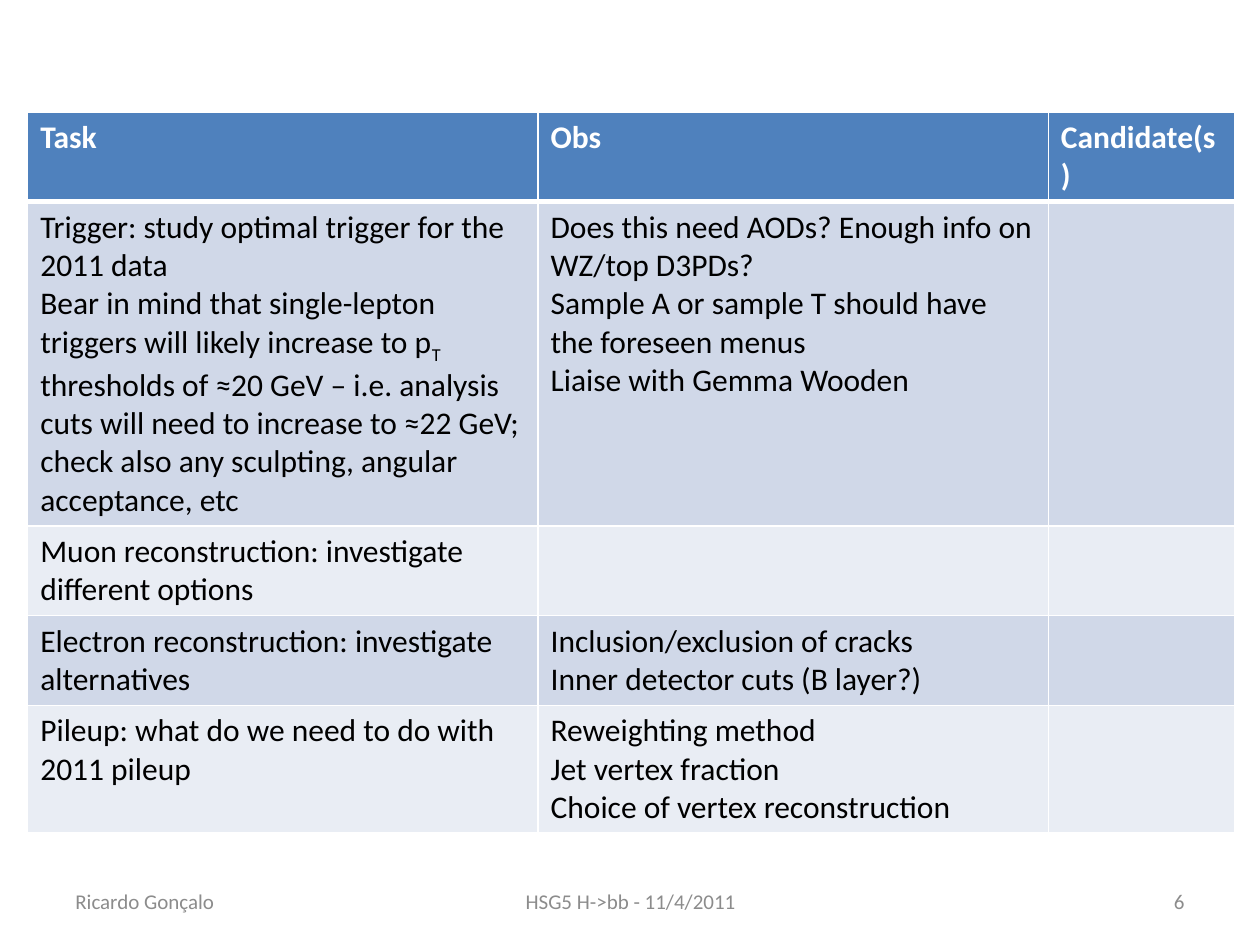
from dataclasses import dataclass

import pptx
import pptx.dml.color
import pptx.enum.text
import pptx.util
from lxml import etree
from pptx.dml.color import RGBColor
from pptx.enum.text import MSO_ANCHOR, PP_ALIGN
from pptx.util import Inches, Pt

FONT = "Calibri"
WHITE = RGBColor(0xFF, 0xFF, 0xFF)
BLACK = RGBColor(0x00, 0x00, 0x00)
GREY = RGBColor(0x8C, 0x8C, 0x8C)
HEADER_BLUE = RGBColor(0x4F, 0x81, 0xBD)
BANDS = (RGBColor(0xD0, 0xD8, 0xE8), RGBColor(0xE9, 0xED, 0xF4))

COLUMN_WIDTHS = (4.05, 4.05, 1.48)
HEADINGS = ("Task", "Obs", "Candidate(s)")
SUBSCRIPT = "_T"


@dataclass
class Task:
    height: float
    task: list[str]
    obs: list[str]


@dataclass
class FooterItem:
    text: str
    left: float
    width: float
    align: PP_ALIGN


TASKS = [
    Task(2.57,
         ["Trigger: study optimal trigger for the 2011 data",
          "Bear in mind that single-lepton triggers will likely increase to p_T "
          "thresholds of ≈20 GeV – i.e. analysis cuts will need to increase to "
          "≈22 GeV; check also any sculpting, angular acceptance, etc"],
         ["Does this need AODs? Enough info on WZ/top D3PDs?",
          "Sample A or sample T should have the foreseen menus",
          "Liaise with Gemma Wooden"]),
    Task(0.71, ["Muon reconstruction: investigate different options"], []),
    Task(0.71, ["Electron reconstruction: investigate alternatives"],
         ["Inclusion/exclusion of cracks", "Inner detector cuts (B layer?)"]),
    Task(1.01, ["Pileup: what do we need to do with 2011 pileup"],
         ["Reweighting method", "Jet vertex fraction",
          "Choice of vertex reconstruction"]),
]

FOOTER = [
    FooterItem("Ricardo Gonçalo", 0.5, 2.33, PP_ALIGN.LEFT),
    FooterItem("HSG5 H->bb - 11/4/2011", 3.42, 3.17, PP_ALIGN.CENTER),
    FooterItem("6", 7.17, 2.33, PP_ALIGN.RIGHT),
]


def style_paragraph(p, size: float, color: RGBColor, bold: bool = False) -> None:
    p.font.name = FONT
    p.font.size = Pt(size)
    p.font.bold = bold
    p.font.color.rgb = color


def add_border(cell, side: str, width: float) -> None:
    tc_pr = cell._tc.get_or_add_tcPr()
    ns = pptx.oxml.ns.qn
    ln = etree.SubElement(tc_pr, ns(f"a:ln{side}"), w=str(Pt(width)))
    fill = etree.SubElement(ln, ns("a:solidFill"))
    etree.SubElement(fill, ns("a:srgbClr"), val=str(WHITE))


def write_cell(cell, lines: list[str], fill: RGBColor, color: RGBColor,
               edges: dict[str, float], bold: bool = False) -> None:
    for side, width in edges.items():
        add_border(cell, side, width)
    cell.fill.solid()
    cell.fill.fore_color.rgb = fill
    tf = cell.text_frame
    for i, line in enumerate(lines or [""]):
        p = tf.paragraphs[0] if i == 0 else tf.add_paragraph()
        style_paragraph(p, 18, color, bold)
        before, mark, after = line.partition(SUBSCRIPT)
        if before:
            p.add_run().text = before
        if mark:
            r = p.add_run()
            r.text = mark[1:]
            r.font._element.set("baseline", "-25000")
            p.add_run().text = after


def add_task_table(s, tasks: list[Task]) -> None:
    heights = [0.71] + [t.height for t in tasks]
    frame = s.shapes.add_table(
        len(heights), len(COLUMN_WIDTHS), Inches(0.22), Inches(0.89),
        Inches(sum(COLUMN_WIDTHS)), Inches(sum(heights)))
    table = frame.table
    for column, width in zip(table.columns, COLUMN_WIDTHS):
        column.width = Inches(width)
    for row, height in zip(table.rows, heights):
        row.height = Inches(height)

    header_edges = {"L": 1, "R": 1, "T": 1, "B": 3}
    for c, heading in enumerate(HEADINGS):
        write_cell(table.cell(0, c), [heading], HEADER_BLUE, WHITE,
                   header_edges, bold=True)
    for i, task in enumerate(tasks):
        edges = {"L": 1, "R": 1, "T": 3 if i == 0 else 1, "B": 1}
        for c, lines in enumerate((task.task, task.obs, [])):
            write_cell(table.cell(i + 1, c), lines, BANDS[i % 2], BLACK, edges)


def add_footer_item(s, item: FooterItem) -> None:
    sp = s.shapes.add_textbox(Inches(item.left), Inches(6.95),
                              Inches(item.width), Inches(0.4))
    tf = sp.text_frame
    tf.word_wrap = True
    tf.vertical_anchor = MSO_ANCHOR.MIDDLE
    p = tf.paragraphs[0]
    p.text = item.text
    p.alignment = item.align
    style_paragraph(p, 12, GREY)


def main() -> None:
    prs = pptx.Presentation()
    prs.slide_width, prs.slide_height = Inches(10), Inches(7.5)
    s = prs.slides.add_slide(prs.slide_layouts[6])
    add_task_table(s, TASKS)
    for item in FOOTER:
        add_footer_item(s, item)
    prs.save("out.pptx")


if __name__ == "__main__":
    main()
